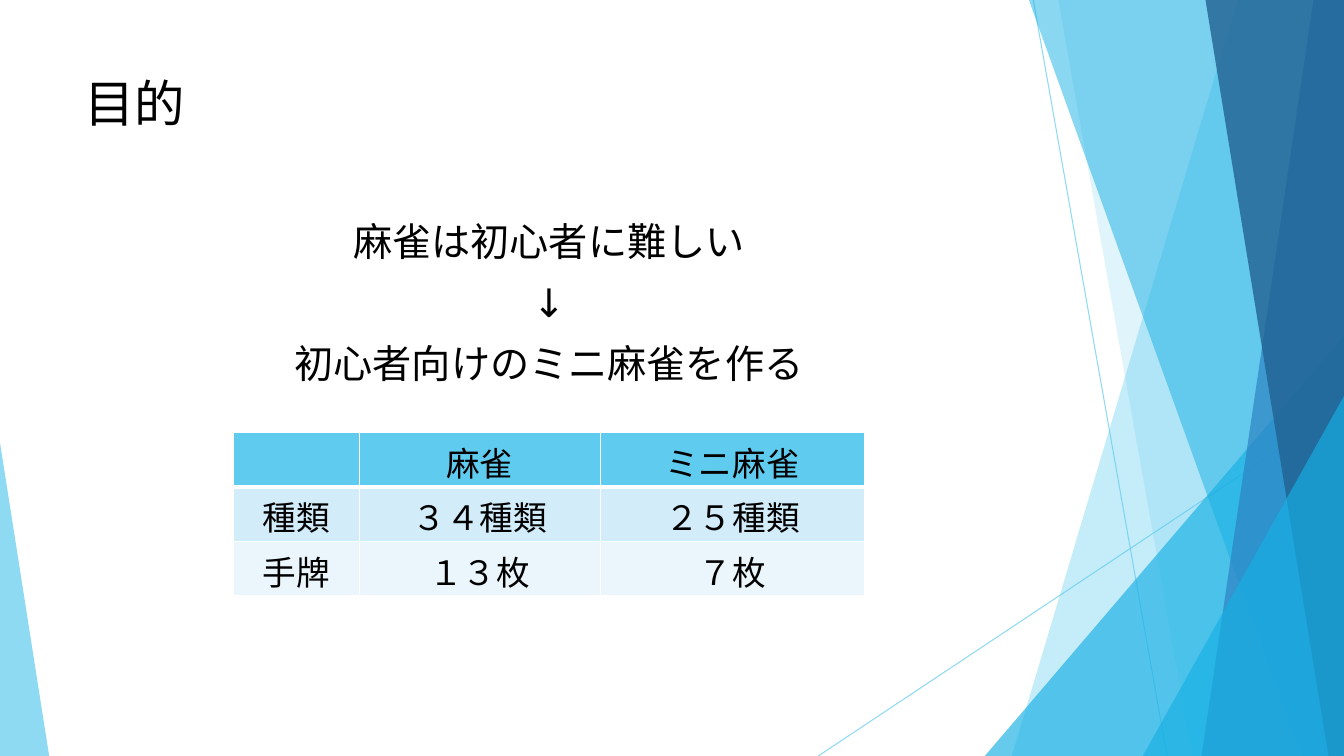
from pptx import Presentation, util as u
from pptx.dml.color import RGBColor
from pptx.enum import shapes, text
from pptx.oxml.ns import qn
from lxml import etree

BLACK = RGBColor(0x00, 0x00, 0x00)
WHITE = RGBColor(0xFF, 0xFF, 0xFF)
SKY = RGBColor(0x5F, 0xCB, 0xEF)
CYAN = RGBColor(0x17, 0xB0, 0xE4)
BLUE = RGBColor(0x2E, 0x83, 0xC3)
NAVY = RGBColor(0x22, 0x62, 0x92)
BAND_DARK = RGBColor(0xD2, 0xEC, 0xF9)
BAND_LIGHT = RGBColor(0xEA, 0xF6, 0xFC)
WIDTH, HEIGHT = 33.87, 19.05


def set_alpha(owner, percent):
    """Make the solid colour found inside an XML element translucent."""
    color = owner.find(".//" + qn("a:srgbClr"))
    etree.SubElement(color, qn("a:alpha"), val=str(percent * 1000))


class SlideBuilder:
    font = "Roboto"

    def __init__(self, deck):
        self.page = deck.slides.add_slide(deck.slide_layouts[6])

    def line(self, x1, y1, x2, y2):
        line = self.page.shapes.add_connector(
            shapes.MSO_CONNECTOR.STRAIGHT, u.Cm(x1), u.Cm(y1), u.Cm(x2), u.Cm(y2))
        line.line.color.rgb = SKY
        line.line.width = u.Pt(0.75)
        properties = line._element.spPr
        set_alpha(properties, 70)
        etree.SubElement(properties, qn("a:effectLst"))

    def paint(self, shape, color, alpha):
        shape.shadow.inherit = False
        shape.fill.solid()
        shape.fill.fore_color.rgb = color
        set_alpha(shape._element.spPr, alpha)
        shape.line.fill.background()

    def facet(self, top_x, bottom_x, color, alpha):
        """Full-height panel with a slanted left edge, ending at the right side."""
        outline = self.page.shapes.build_freeform(u.Cm(top_x), 0)
        outline.add_line_segments([
            (u.Cm(x), u.Cm(y))
            for x, y in ((WIDTH, 0), (WIDTH, HEIGHT), (bottom_x, HEIGHT))])
        self.paint(outline.convert_to_shape(), color, alpha)

    def triangle(self, left, top, width, apex, color, alpha):
        """Triangle standing on the bottom edge; apex 0 is left, 1 is right."""
        shape = self.page.shapes.add_shape(
            shapes.MSO_SHAPE.ISOSCELES_TRIANGLE,
            u.Cm(left), u.Cm(top), u.Cm(width), u.Cm(HEIGHT - top))
        shape.adjustments[0] = apex
        self.paint(shape, color, alpha)

    def span(self, para, words, size, align):
        para.alignment = align
        span = para.add_run()
        span.text = words
        span.font.name = self.font
        span.font.size = u.Pt(size)
        span.font.color.rgb = BLACK

    def text(self, left, top, width, height, lines, size,
             align=text.PP_ALIGN.LEFT, before=0):
        box = self.page.shapes.add_textbox(
            u.Cm(left), u.Cm(top), u.Cm(width), u.Cm(height))
        frame = box.text_frame
        frame.word_wrap = True
        for index, words in enumerate(lines):
            para = frame.add_paragraph() if index else frame.paragraphs[0]
            para.space_before = u.Pt(before)
            self.span(para, words, size, align)

    def border(self, cell, side, points):
        edge = etree.SubElement(cell._tc.get_or_add_tcPr(), qn("a:ln" + side),
                                w=str(u.Pt(points)))
        fill = etree.SubElement(edge, qn("a:solidFill"))
        etree.SubElement(fill, qn("a:srgbClr"), val=str(WHITE))

    def table(self, left, top, widths, row_height, rows, fills, size):
        table = self.page.shapes.add_table(
            len(rows), len(widths), u.Cm(left), u.Cm(top),
            u.Cm(sum(widths)), u.Cm(row_height * len(rows))).table
        table.first_row = table.horz_banding = False
        for column, width in zip(table.columns, widths):
            column.width = u.Cm(width)
        for r, (row, color) in enumerate(zip(rows, fills)):
            for c, words in enumerate(row):
                cell = table.cell(r, c)
                for side in "LRTB":
                    under_header = (r, side) in ((0, "B"), (1, "T"))
                    self.border(cell, side, 3 if under_header else 1)
                cell.fill.solid()
                cell.fill.fore_color.rgb = color
                if words:
                    self.span(cell.text_frame.paragraphs[0], words, size,
                              text.PP_ALIGN.CENTER)


def main():
    deck = Presentation()
    deck.slide_width, deck.slide_height = u.Cm(WIDTH), u.Cm(HEIGHT)
    slide = SlideBuilder(deck)

    slide.line(26.04, 0, 29.41, HEIGHT)
    slide.line(WIDTH, 10.24, 20.62, HEIGHT)
    slide.facet(31.19, 25.5, SKY, 36)
    slide.facet(26.67, 30.05, SKY, 20)
    slide.triangle(24.82, 8.46, 9.05, 1, CYAN, 66)
    slide.facet(25.93, 32.79, CYAN, 50)
    slide.facet(33.1, 30.28, BLUE, 70)
    slide.facet(30.38, 33.48, NAVY, 80)
    slide.triangle(28.8, 9.98, 5.07, 1, CYAN, 66)
    slide.triangle(0, 11.15, 1.24, 0, SKY, 70)

    slide.text(1.88, 1.7, 23.88, 3.66, ["目的"], 36)
    slide.text(5.44, 5.36, 16.79, 5.51,
               ["麻雀は初心者に難しい", "↓", "初心者向けのミニ麻雀を作る"],
               28, text.PP_ALIGN.CENTER, before=10)
    slide.table(5.87, 10.9, [3.18, 6.08, 6.66], 1.37,
                [["", "麻雀", "ミニ麻雀"],
                 ["種類", "３４種類", "２５種類"],
                 ["手牌", "１３枚", "７枚"]],
                [SKY, BAND_DARK, BAND_LIGHT], 24)
    deck.save("out.pptx")


if __name__ == "__main__":
    main()
